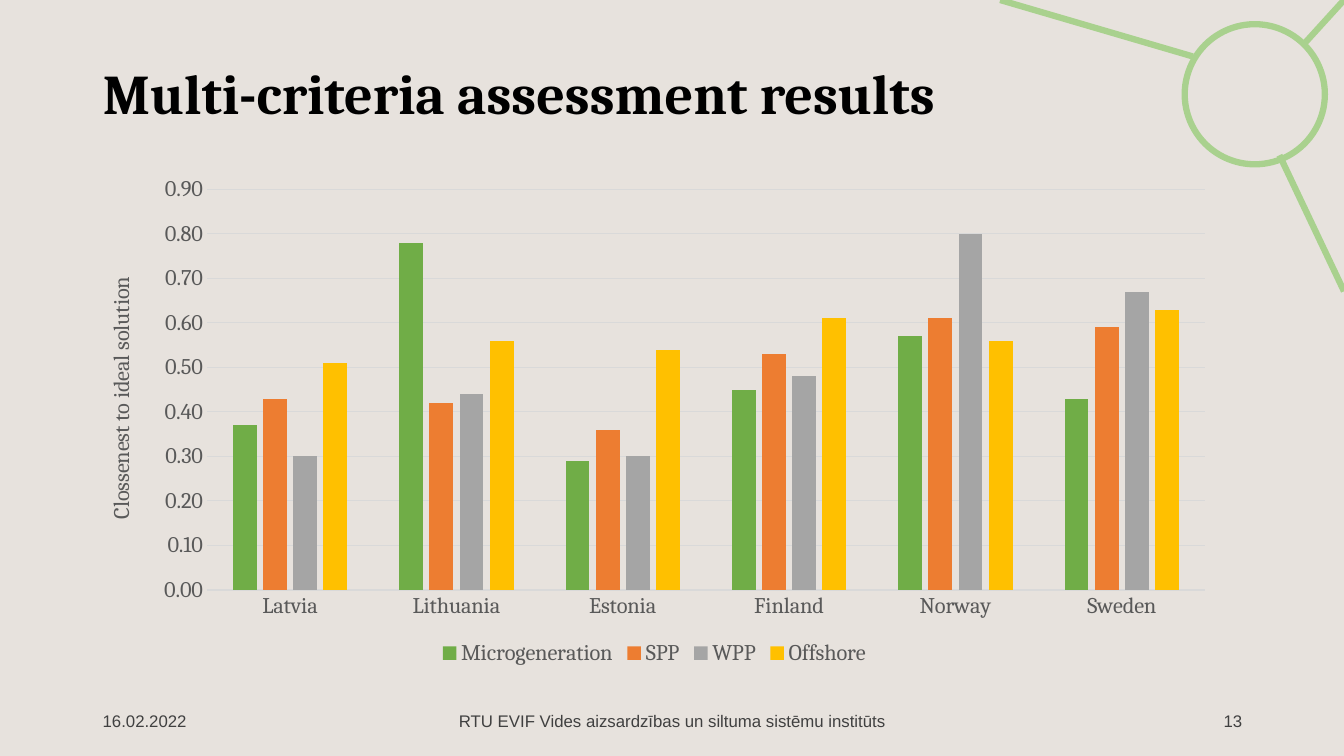
from dataclasses import dataclass

from lxml.etree import SubElement
from pptx import Presentation
from pptx.chart.chart import Chart
from pptx.chart.data import CategoryChartData
from pptx.dml.color import RGBColor
from pptx.enum.chart import XL_CHART_TYPE, XL_LEGEND_POSITION, XL_TICK_MARK
from pptx.enum.shapes import MSO_CONNECTOR, MSO_SHAPE
from pptx.enum.text import MSO_ANCHOR, PP_ALIGN
from pptx.oxml import parse_xml
from pptx.oxml.ns import nsdecls, qn
from pptx.slide import Slide
from pptx.text.text import Font, TextFrame
from pptx.util import Inches, Pt

BACKGROUND = "E7E2DD"
ORNAMENT = "A9D18E"
CHART_TEXT = "595959"
GRID = "D9D9D9"
FOOTER_TEXT = "404040"
SERIF = "Cambria"
SANS = "Arial"


@dataclass
class Branch:
    """A line running between the ring and the slide edge."""
    start: tuple[float, float]
    end: tuple[float, float]


@dataclass
class FooterItem:
    """One text in the footer row."""
    text: str
    left: float
    width: float
    align: PP_ALIGN


@dataclass
class Technology:
    """One chart series with its colour and a value per country."""
    name: str
    color: str
    values: tuple[float, ...]


BRANCHES = [
    Branch((13.33, 2.89), (12.69, 1.54)),
    Branch((11.83, 0.56), (9.92, 0)),
    Branch((13.33, 0), (12.93, 0.44)),
]
FOOTER = [
    FooterItem("16.02.2022", 0.92, 3, PP_ALIGN.LEFT),
    FooterItem("RTU EVIF Vides aizsardzības un siltuma sistēmu institūts", 4.42, 4.5, PP_ALIGN.CENTER),
    FooterItem("13", 9.42, 3, PP_ALIGN.RIGHT),
]
COUNTRIES = ["Latvia", "Lithuania", "Estonia", "Finland", "Norway", "Sweden"]
TECHNOLOGIES = [
    Technology("Microgeneration", "70AD47", (0.37, 0.78, 0.29, 0.45, 0.57, 0.43)),
    Technology("SPP", "ED7D31", (0.43, 0.42, 0.36, 0.53, 0.61, 0.59)),
    Technology("WPP", "A5A5A5", (0.3, 0.44, 0.3, 0.48, 0.8, 0.67)),
    Technology("Offshore", "FFC000", (0.51, 0.56, 0.54, 0.61, 0.56, 0.63)),
]


def color_of(value: str) -> RGBColor:
    """Turn a hex string into a colour."""
    return RGBColor.from_string(value)


def format_font(font: Font, size: float, color: str, name: str, bold: bool = False) -> None:
    """Set the look of a font."""
    font.size = Pt(size)
    font.name = name
    font.bold = bold
    font.color.rgb = color_of(color)


def write_text(frame: TextFrame, text: str, *, size: float, color: str, name: str,
               bold: bool = False, align: PP_ALIGN | None = None,
               line_spacing: float | None = None) -> None:
    """Fill a text frame with one formatted paragraph."""
    paragraph = frame.paragraphs[0]
    paragraph.alignment = align
    paragraph.line_spacing = line_spacing
    run = paragraph.add_run()
    run.text = text
    format_font(run.font, size, color, name, bold)


def draw_ornament(slide: Slide) -> None:
    """Draw the ring and its branches in the top right corner."""
    ring = slide.shapes.add_shape(MSO_SHAPE.OVAL, Inches(11.75), Inches(0.24), Inches(1.39), Inches(1.39))
    ring.shadow.inherit = False
    ring.fill.background()
    ring.line.color.rgb = color_of(ORNAMENT)
    ring.line.width = Pt(4.5)
    for branch in BRANCHES:
        points = [Inches(value) for value in branch.start + branch.end]
        line = slide.shapes.add_connector(MSO_CONNECTOR.STRAIGHT, *points)
        line.line.color.rgb = color_of(ORNAMENT)
        line.line.width = Pt(4.5)
        SubElement(line._element.spPr, qn("a:effectLst"))


def draw_title(slide: Slide) -> None:
    """Place and fill the title placeholder."""
    title = slide.shapes.title
    title.left, title.top = Inches(0.92), Inches(0.23)
    title.width, title.height = Inches(10.34), Inches(1.45)
    title.text_frame.word_wrap = True
    title.text_frame.vertical_anchor = MSO_ANCHOR.MIDDLE
    write_text(title.text_frame, "Multi-criteria assessment results", size=40, color="000000",
               name=SERIF, bold=True, align=PP_ALIGN.LEFT, line_spacing=0.9)


def draw_footer(slide: Slide) -> None:
    """Draw the footer row."""
    for item in FOOTER:
        box = slide.shapes.add_textbox(Inches(item.left), Inches(6.95), Inches(item.width), Inches(0.4))
        box.text_frame.word_wrap = True
        box.text_frame.vertical_anchor = MSO_ANCHOR.MIDDLE
        write_text(box.text_frame, item.text, size=12, color=FOOTER_TEXT, name=SANS, align=item.align)


def place_plot(chart: Chart, left: float, top: float, width: float, height: float) -> None:
    """Fix the inner plot area as fractions of the chart."""
    plot_area = chart._chartSpace.chart.plotArea
    for layout in plot_area.findall(qn("c:layout")):
        plot_area.remove(layout)
    places = "".join(f'<c:{tag} val="{value}"/>' for tag, value in zip("xywh", (left, top, width, height)))
    plot_area.insert(0, parse_xml(
        f'<c:layout {nsdecls("c")}><c:manualLayout><c:layoutTarget val="inner"/>'
        f'<c:xMode val="edge"/><c:yMode val="edge"/>{places}</c:manualLayout></c:layout>'))


def format_axes(chart: Chart) -> None:
    """Format both axes, the grid and the axis title."""
    for axis in (chart.category_axis, chart.value_axis):
        axis.major_tick_mark = XL_TICK_MARK.NONE
        axis.minor_tick_mark = XL_TICK_MARK.NONE
        format_font(axis.tick_labels.font, 16, CHART_TEXT, SERIF)
    values = chart.value_axis
    values.minimum_scale, values.maximum_scale, values.major_unit = 0, 0.9, 0.1
    values.tick_labels.number_format = "0.00"
    values.tick_labels.number_format_is_linked = False
    values.format.line.fill.background()
    values.has_major_gridlines = True
    for line in (chart.category_axis.format.line, values.major_gridlines.format.line):
        line.color.rgb = color_of(GRID)
        line.width = Pt(0.75)
    write_text(values.axis_title.text_frame, "Clossenest to ideal solution",
               size=16, color=CHART_TEXT, name=SERIF)


def draw_chart(slide: Slide) -> None:
    """Draw the clustered columns of technologies by country."""
    data = CategoryChartData(number_format="0.00")
    data.categories = COUNTRIES
    for technology in TECHNOLOGIES:
        data.add_series(technology.name, technology.values)
    chart = slide.shapes.add_chart(XL_CHART_TYPE.COLUMN_CLUSTERED, Inches(0.8), Inches(1.68),
                                   Inches(11.38), Inches(4.97), data).chart
    format_font(chart.font, 16, "000000", SERIF)
    chart.has_title = False
    chart.has_legend = True
    chart.legend.position = XL_LEGEND_POSITION.BOTTOM
    chart.legend.include_in_layout = False
    format_font(chart.legend.font, 16, CHART_TEXT, SERIF)
    plot = chart.plots[0]
    plot.vary_by_categories = False
    plot.gap_width, plot.overlap = 219, -27
    for series, technology in zip(plot.series, TECHNOLOGIES):
        series.format.fill.solid()
        series.format.fill.fore_color.rgb = color_of(technology.color)
    format_axes(chart)
    place_plot(chart, 0.11, 0.04, 0.87, 0.8)


def main() -> None:
    """Build and save the presentation."""
    presentation = Presentation()
    presentation.slide_width, presentation.slide_height = Inches(13.33), Inches(7.5)
    slide = presentation.slides.add_slide(presentation.slide_layouts[5])
    slide.background.fill.solid()
    slide.background.fill.fore_color.rgb = color_of(BACKGROUND)
    draw_ornament(slide)
    draw_title(slide)
    draw_footer(slide)
    draw_chart(slide)
    presentation.save("out.pptx")


if __name__ == "__main__":
    main()
